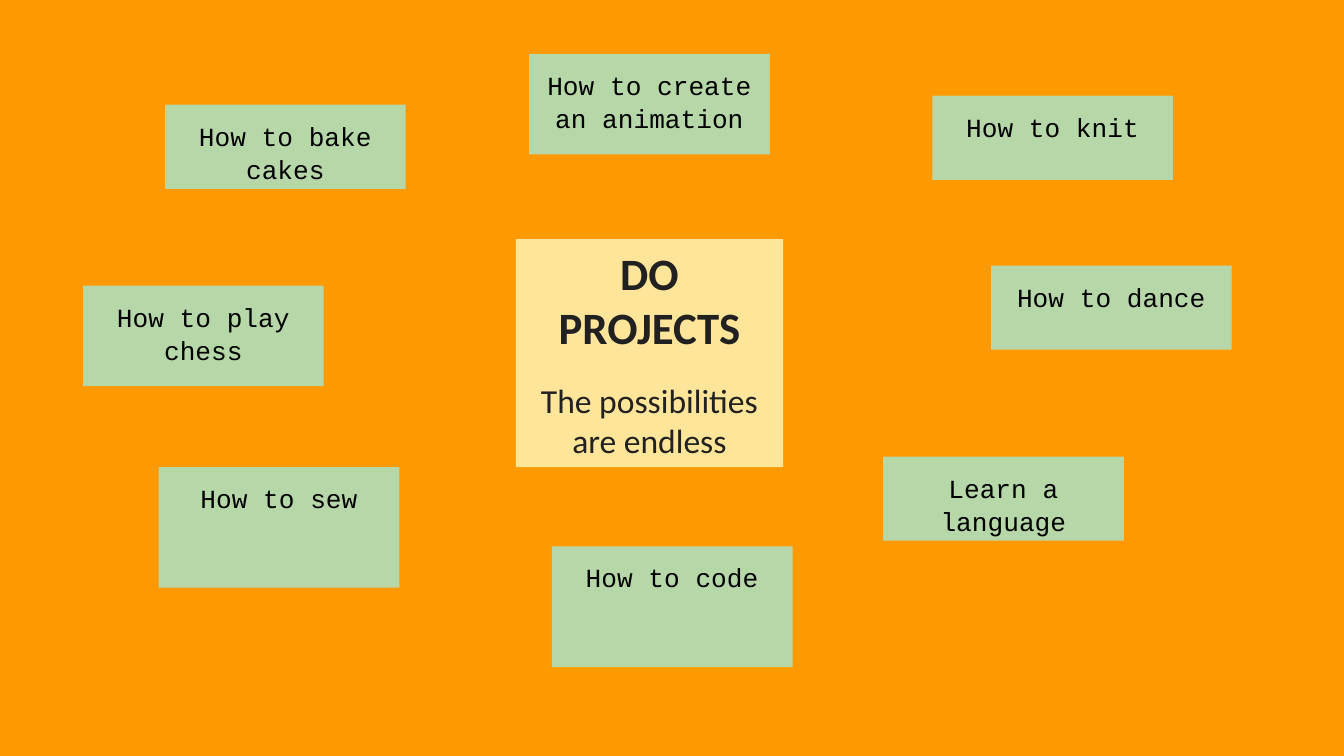
from pptx import Presentation
from pptx.dml.color import RGBColor
from pptx.enum.shapes import MSO_SHAPE
from pptx.enum.text import MSO_ANCHOR, PP_ALIGN
from pptx.util import Cm, Pt

HEX = {"back": "FF9900", "hub": "FFE599", "idea": "B6D7A8",
       "dark": "212121", "black": "000000"}


def add_box(left, top, width, height, fill, anchor):
    """Add a plain filled box, lengths in cm, and return its text frame."""
    box = slide.shapes.add_shape(MSO_SHAPE.RECTANGLE, Cm(left), Cm(top),
                                 Cm(width), Cm(height))
    box.shadow.inherit = False
    box.fill.solid()
    box.fill.fore_color.rgb = RGBColor.from_string(HEX[fill])
    box.line.fill.background()
    frame = box.text_frame
    frame.word_wrap = True
    frame.vertical_anchor = anchor
    frame.margin_left = frame.margin_right = Cm(0.25)
    frame.margin_top = frame.margin_bottom = Cm(0.25)
    return frame


def set_text(para, text, size, font, color, bold=False):
    para.text = text
    para.alignment = PP_ALIGN.CENTER
    para.font.size = Pt(size)
    para.font.name = font
    para.font.bold = bold
    para.font.color.rgb = RGBColor.from_string(HEX[color])


deck = Presentation()
deck.slide_width, deck.slide_height = Cm(25.4), Cm(14.29)
slide = deck.slides.add_slide(deck.slide_layouts[6])
slide.background.fill.solid()
slide.background.fill.fore_color.rgb = RGBColor.from_string(HEX["back"])

# Central message
hub = add_box(9.75, 4.52, 5.05, 4.31, "hub", MSO_ANCHOR.MIDDLE)
set_text(hub.paragraphs[0], "DO PROJECTS", 24, "Calibri", "dark", True)
para = hub.add_paragraph()
set_text(para, "The possibilities are endless", 18, "Calibri", "dark")
para.space_before = Pt(14.5)

# Ideas around it: text, left, top, height
ideas = [
    ("How to bake cakes", 3.12, 1.98, 1.59),
    ("How to create an animation", 10, 1.02, 1.9),
    ("How to sew", 3, 8.83, 2.28),
    ("How to code", 10.43, 10.33, 2.28),
    ("Learn a language", 16.69, 8.63, 1.59),
    ("How to dance", 18.73, 5.02, 1.59),
    ("How to knit", 17.62, 1.81, 1.59),
    ("How to play chess", 1.57, 5.4, 1.9),
]
for text, left, top, height in ideas:
    frame = add_box(left, top, 4.55, height, "idea", MSO_ANCHOR.TOP)
    para = frame.paragraphs[0]
    set_text(para, text, 14, "Courier New", "black")
    para.line_spacing = 1.07

deck.save("out.pptx")
